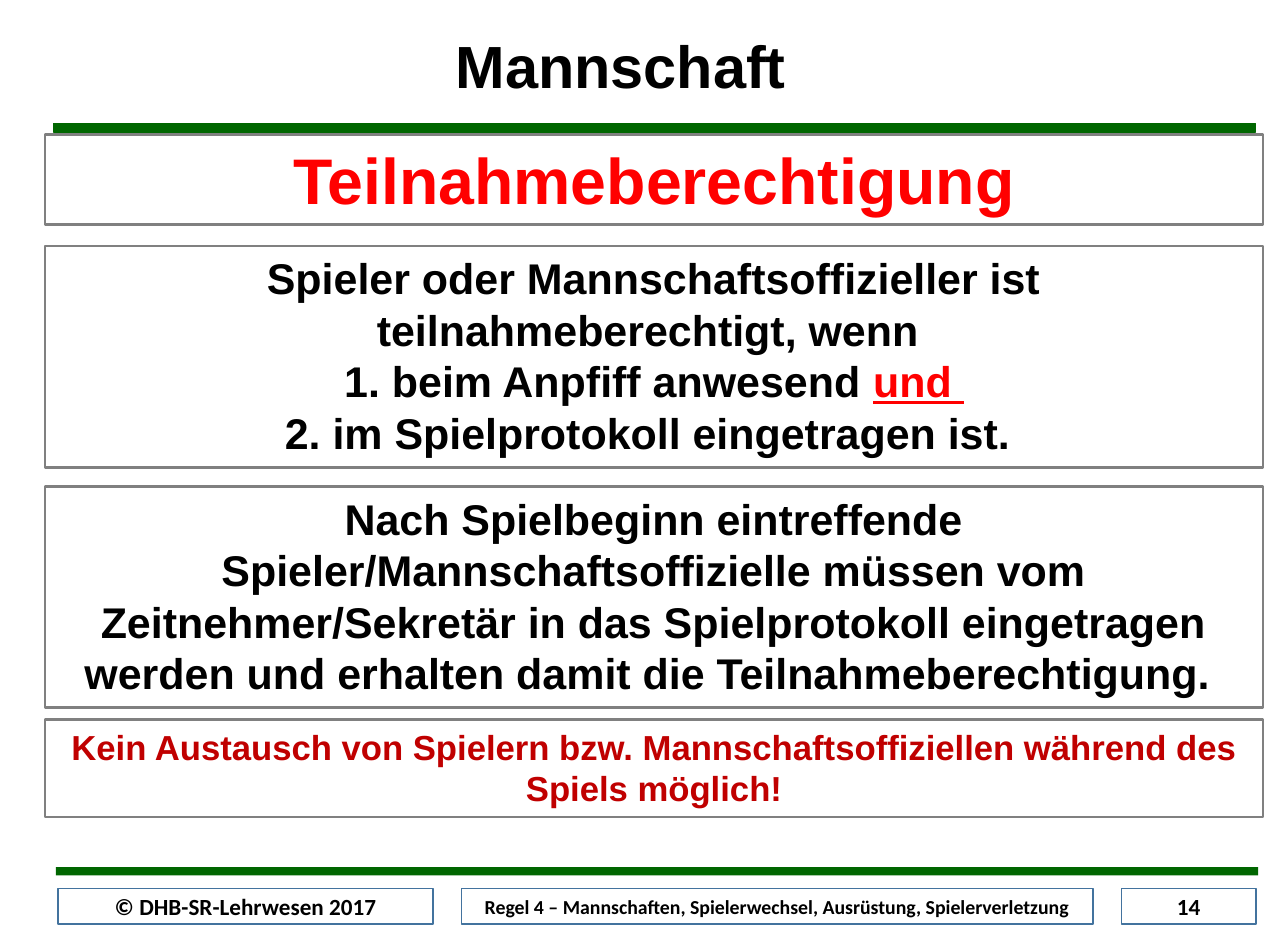
from pptx import Presentation
from pptx.dml.color import RGBColor
from pptx.enum.shapes import MSO_SHAPE as Shape
from pptx.enum.text import MSO_ANCHOR as Anchor, PP_ALIGN as Align
from pptx.util import Inches, Pt

COLORS = {
    "white": "FFFFFF", "black": "000000", "green": "006600", "grey": "808080",
    "blue": "43739E", "red": "FF0000", "dark_red": "C00000",
}


def rgb(name):
    return RGBColor.from_string(COLORS[name])


def add_box(slide, box, fill, line=None, width=1):
    """Draw a plain rectangle; box is left, top, width, height in inches."""
    rect = slide.shapes.add_shape(Shape.RECTANGLE, *map(Inches, box))
    rect.shadow.inherit = False
    rect.fill.solid()
    rect.fill.fore_color.rgb = rgb(fill)
    if line:
        rect.line.color.rgb = rgb(line)
        rect.line.width = Pt(width)
    else:
        rect.line.fill.background()
    return rect


def write(shape, paragraphs, size, font="Arial", anchor=Anchor.TOP, inset=0.1):
    """Fill a shape with centred bold paragraphs of (text, color, underline) runs."""
    frame = shape.text_frame
    frame.word_wrap = True
    frame.vertical_anchor = anchor
    frame.margin_left = frame.margin_right = Inches(inset)
    frame.margin_top = frame.margin_bottom = Inches(0.05)
    for index, runs in enumerate(paragraphs):
        paragraph = frame.add_paragraph() if index else frame.paragraphs[0]
        paragraph.alignment = Align.CENTER
        for text, color, underline in runs:
            run = paragraph.add_run()
            run.text = text
            run.font.name = font
            run.font.size = Pt(size)
            run.font.bold = True
            run.font.underline = underline
            run.font.color.rgb = rgb(color)


def add_header(slide, box):
    left, top, width, height = box
    title = slide.shapes.add_textbox(
        Inches(left + 2.92), Inches(top), Inches(3.7), Inches(0.63))
    write(title, [[("Mannschaft", "black", False)]], 36)
    title.text_frame.paragraphs[0].line_spacing = 0.9
    add_box(slide, (left, top + height - 0.07, width, 0.07), "green", "green", 0.75)


def add_rules(slide, box):
    left, top, width, _ = box
    heading = [[("Teilnahmeberechtigung", "red", False)]]
    conditions = [
        [("Spieler oder Mannschaftsoffizieller ist teilnahmeberechtigt, wenn ", "black", False)],
        [("1. beim Anpfiff anwesend ", "black", False), ("und ", "red", True)],
        [("2. im Spielprotokoll eingetragen ist. ", "black", False)],
    ]
    late_arrival = [[(
        "Nach Spielbeginn eintreffende Spieler/Mannschaftsoffizielle müssen vom "
        "Zeitnehmer/Sekretär in das Spielprotokoll eingetragen werden und erhalten "
        "damit die Teilnahmeberechtigung. ", "black", False)]]
    no_exchange = [[(
        "Kein Austausch von Spielern bzw. Mannschaftsoffiziellen während des Spiels "
        "möglich!", "dark_red", False)]]
    for offset, height, size, content in (
        (0, 0.76, 39, heading),
        (0.94, 1.86, 26, conditions),
        (2.96, 1.86, 26, late_arrival),
        (4.92, 0.82, 21, no_exchange),
    ):
        panel = add_box(slide, (left, top + offset, width, height), "white", "grey", 1.5)
        write(panel, content, size, inset=0.11)


def add_footer(slide, box):
    left, top, width, _ = box
    add_box(slide, (left, top, width, 0.07), "green")
    for offset, field_width, size, text in (
        (0.02, 3.15, 14, "© DHB-SR-Lehrwesen 2017"),
        (3.41, 5.31, 12,
         "Regel 4 – Mannschaften, Spielerwechsel, Ausrüstung, Spielerverletzung"),
        (8.96, 1.13, 14, "14"),
    ):
        field = add_box(slide, (left + offset, top + 0.18, field_width, 0.3), "white", "blue")
        write(field, [[(text, "black", False)]], size, "Calibri", Anchor.MIDDLE)


def main():
    deck = Presentation()
    deck.slide_width, deck.slide_height = Inches(10.83), Inches(7.92)
    slide = deck.slides.add_slide(deck.slide_layouts[6])
    add_header(slide, (0.45, 0.26, 10.11, 0.85))
    add_rules(slide, (0.38, 1.13, 10.24, 5.74))
    add_footer(slide, (0.47, 7.29, 10.11, 0.48))
    deck.save("out.pptx")


if __name__ == "__main__":
    main()
